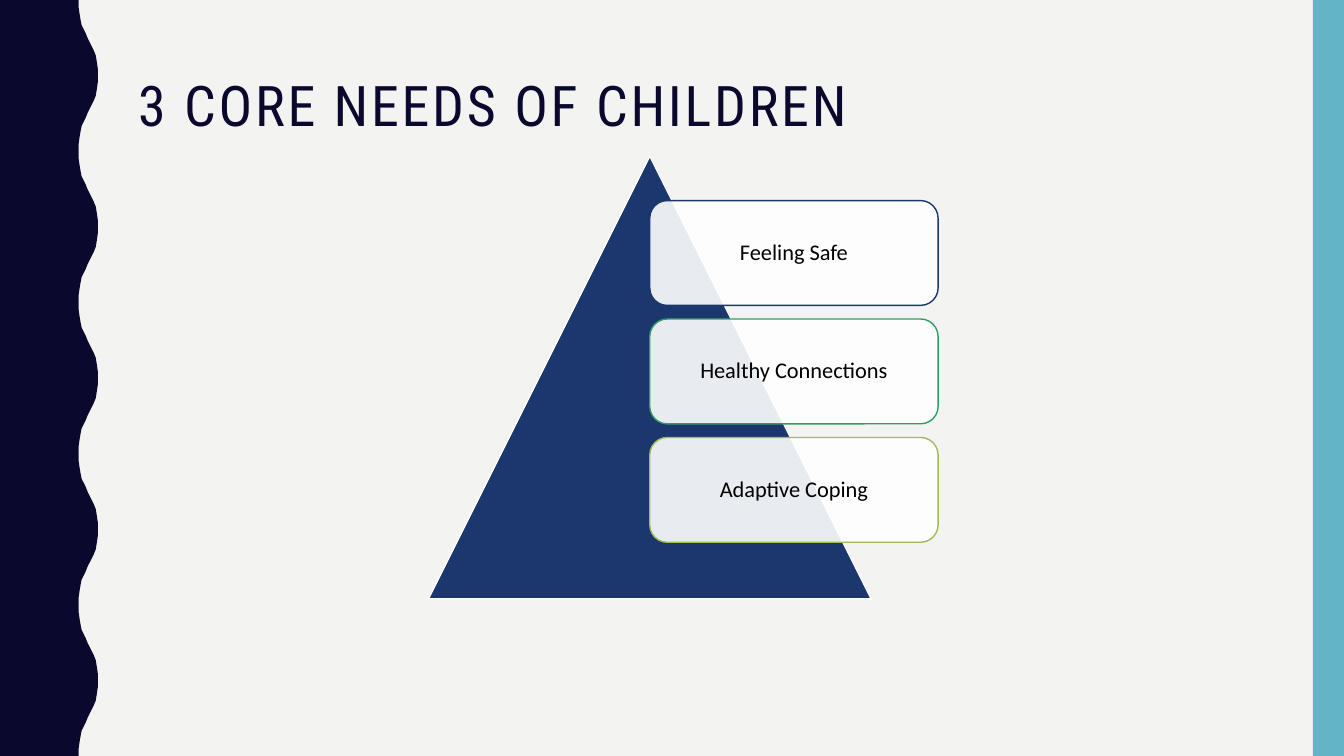
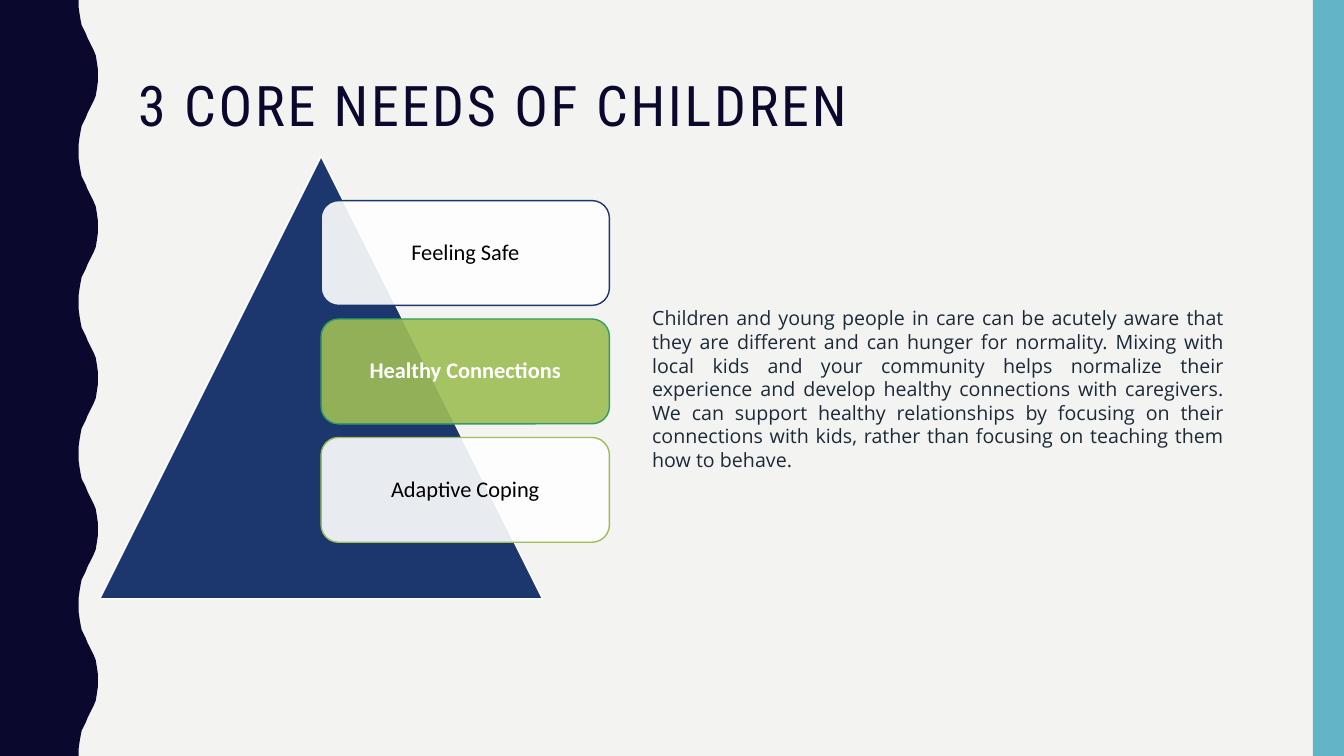
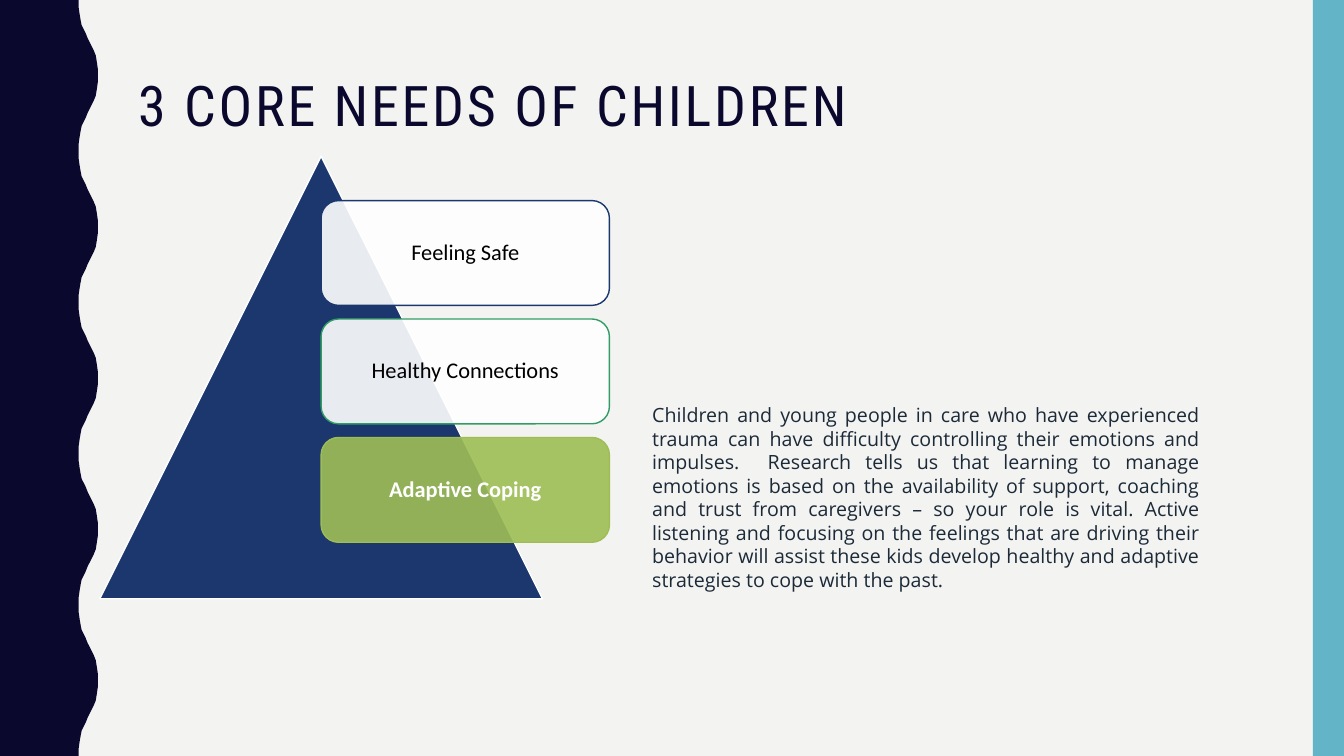
from pptx import Presentation
from pptx.dml.color import RGBColor
from pptx.enum.shapes import MSO_SHAPE
from pptx.enum.text import MSO_ANCHOR, MSO_AUTO_SIZE, PP_ALIGN
from pptx.oxml import parse_xml
from pptx.oxml.ns import nsdecls, qn
from pptx.util import Pt

PX = 9144  # EMU in one px, 100 px to the inch
SLIDE_W, SLIDE_H = 1333, 750

COLORS = {
    "background": "F3F3F2", "navy": "0B082E", "teal": "62B4C6",
    "blue": "1B376E", "green": "319D65", "lime": "9EBE55",
    "white": "FFFFFF", "black": "000000", "text": "1C2A38",
}

TITLE = "3 CORE NEEDS OF CHILDREN"
NEEDS = [("Feeling Safe", "blue"), ("Healthy Connections", "green"), ("Adaptive Coping", "lime")]
SLIDES = [
    {"pyramid_x": 425, "active": None, "note": None},
    {"pyramid_x": 99, "active": "Healthy Connections", "note": (
        (637, 299, 587, 175),
        "Children and young people in care can be acutely aware that they are different and can "
        "hunger for normality. Mixing with local kids and your community helps normalize their "
        "experience and develop healthy connections with caregivers. We can support healthy "
        "relationships by focusing on their connections with kids, rather than focusing on "
        "teaching them how to behave.")},
    {"pyramid_x": 99, "active": "Adaptive Coping", "note": (
        (637, 395, 563, 199),
        "Children and young people in care who have experienced trauma can have difficulty "
        "controlling their emotions and impulses.  Research tells us that learning to manage "
        "emotions is based on the availability of support, coaching and trust from caregivers – "
        "so your role is vital. Active listening and focusing on the feelings that are driving "
        "their behavior will assist these kids develop healthy and adaptive strategies to cope "
        "with the past.")},
]

PYRAMID_TOP, PYRAMID_SIZE = 155, 439
BOX_TOP, BOX_W, BOX_H, BOX_PITCH = 199, 286, 104, 117.5
BOX_INSET = 12

# One rising half of the wave, from trough to crest; the falling half mirrors it.
WAVE_PERIOD = 150
HALF_WAVE = [(78, 0), (78, 7), (79, 14), (80, 20), (81, 25), (83, 29), (85, 33), (87, 38),
             (89, 42), (91, 46), (93, 50), (95, 55), (96, 61), (97, 68), (97, 75)]


def px(*lengths):
    return [round(v * PX) for v in lengths]


def rgb(name):
    return RGBColor.from_string(COLORS[name])


def paint(shape, fill, line=None, opacity=100):
    shape.shadow.inherit = False
    shape.fill.solid()
    shape.fill.fore_color.rgb = rgb(fill)
    if opacity < 100:
        color = shape.element.spPr.find(qn("a:solidFill"))[0]
        color.append(parse_xml(f'<a:alpha {nsdecls("a")} val="{opacity * 1000}"/>'))
    if line:
        shape.line.color.rgb = rgb(line)
        shape.line.width = Pt(1)
    else:
        shape.line.fill.background()


def set_font(p, name, size, color, bold=False):
    p.font.name, p.font.size, p.font.bold = name, Pt(size), bold
    p.font.color.rgb = rgb(color)


def style_layout(layout):
    layout.background.fill.solid()
    layout.background.fill.fore_color.rgb = rgb("background")
    for ph in list(layout.placeholders)[1:]:
        ph.element.getparent().remove(ph.element)
    title = layout.placeholders[0]
    title.left, title.top, title.width, title.height = px(127, 56, 1206, 103)
    tf = title.text_frame
    tf.vertical_anchor = MSO_ANCHOR.MIDDLE
    tf.auto_size = MSO_AUTO_SIZE.NONE
    styles = title.element.txBody.find(qn("a:lstStyle"))
    styles.clear()
    styles.append(parse_xml(
        f'<a:lvl1pPr {nsdecls("a")} algn="l"><a:lnSpc><a:spcPct val="90000"/></a:lnSpc>'
        f'<a:defRPr sz="4000" b="0" spc="200"><a:solidFill><a:srgbClr val="{COLORS["navy"]}"/>'
        '</a:solidFill><a:latin typeface="Roboto Condensed"/></a:defRPr></a:lvl1pPr>'))


def move_bands_to_layout(s, layout):
    """Layouts cannot create shapes, so draw the bands on a slide and move them."""
    falling = [(x, WAVE_PERIOD - y) for x, y in HALF_WAVE[-2::-1]]
    edge = [(x, y + top) for top in range(0, SLIDE_H, WAVE_PERIOD)
            for x, y in HALF_WAVE + falling]
    outline = s.shapes.build_freeform(0, 0, scale=PX)
    outline.add_line_segments(edge + [(0, SLIDE_H)], close=True)
    wave = outline.convert_to_shape()
    paint(wave, "navy")
    stripe = s.shapes.add_shape(MSO_SHAPE.RECTANGLE, *px(1302, 0, SLIDE_W - 1302, SLIDE_H))
    paint(stripe, "teal")
    for band in (stripe, wave):
        layout.shapes.element.insert(2, band.element)


def add_pyramid(s, left, active):
    shapes = s.shapes.add_group_shape().shapes
    triangle = shapes.add_shape(MSO_SHAPE.ISOSCELES_TRIANGLE,
                                *px(left, PYRAMID_TOP, PYRAMID_SIZE, PYRAMID_SIZE))
    paint(triangle, "blue", "white")
    for i, (need, line) in enumerate(NEEDS):
        on = need == active
        box = shapes.add_shape(MSO_SHAPE.ROUNDED_RECTANGLE, *px(
            left + PYRAMID_SIZE / 2, BOX_TOP + i * BOX_PITCH, BOX_W, BOX_H))
        paint(box, "lime" if on else "white", line, opacity=90)
        tf = box.text_frame
        tf.word_wrap = True
        tf.vertical_anchor = MSO_ANCHOR.MIDDLE
        tf.margin_left, tf.margin_top, tf.margin_right, tf.margin_bottom = px(*[BOX_INSET] * 4)
        p = tf.paragraphs[0]
        p.text, p.alignment, p.line_spacing = need, PP_ALIGN.CENTER, 0.9
        set_font(p, "Calibri", 16, "white" if on else "black", on)


def add_note(s, place, text):
    tf = s.shapes.add_textbox(*px(*place)).text_frame
    tf.word_wrap = True
    tf.auto_size = MSO_AUTO_SIZE.SHAPE_TO_FIT_TEXT
    p = tf.paragraphs[0]
    p.text, p.alignment = text, PP_ALIGN.JUSTIFY
    set_font(p, "Open Sans", 14, "text")


def main():
    prs = Presentation()
    prs.slide_width, prs.slide_height = px(SLIDE_W, SLIDE_H)
    layout = prs.slide_layouts[5]
    style_layout(layout)
    for i, content in enumerate(SLIDES):
        s = prs.slides.add_slide(layout)
        if i == 0:
            move_bands_to_layout(s, layout)
        s.shapes.title.text = TITLE
        add_pyramid(s, content["pyramid_x"], content["active"])
        if content["note"]:
            add_note(s, *content["note"])
    prs.save("out.pptx")


if __name__ == "__main__":
    main()
